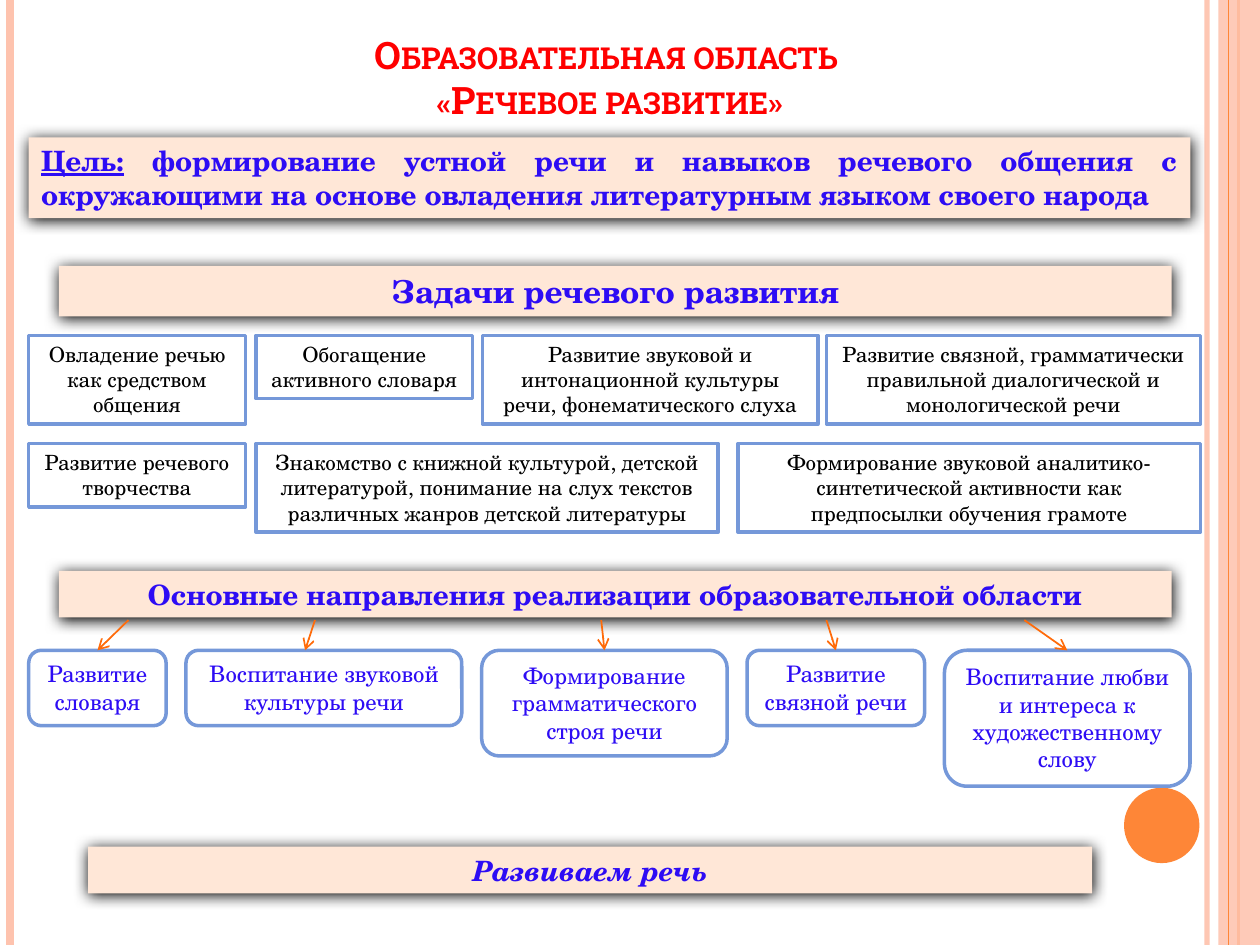
from lxml.etree import SubElement
from pptx import Presentation
from pptx.dml.color import RGBColor
from pptx.enum.shapes import MSO_CONNECTOR, MSO_SHAPE as Shape
from pptx.enum.text import MSO_ANCHOR as Anchor, MSO_AUTO_SIZE as AutoSize, PP_ALIGN as Align
from pptx.oxml.ns import qn
from pptx.util import Cm, Pt

COLORS = {
    "white": "FFFFFF", "black": "000000", "red": "FF0000", "ink": "2D0CF4",
    "band": "FFE7D7", "border": "7598D9", "arrow": "FF6B0A",
    "peach": "FEC3AE", "orange": "FE8637",
}
TITLE_FONT, BODY_FONT = "Roboto Slab", "TeX Gyre Schola"
WIDTH, HEIGHT = 25.4, 19.05

TITLE = "Образовательная область \v«Речевое развитие»"
GOAL = ("Цель:", " формирование устной речи и навыков речевого общения с окружающими "
        "на основе овладения литературным языком своего народа")
BANDS = [
    ("Задачи речевого развития", (1.19, 5.36, 22.43, 1.02), 18, False),
    ("Развиваем речь", (1.78, 17.07, 20.24, 0.94), 16, True),
    ("Основные направления реализации образовательной области", (1.19, 11.51, 22.43, 0.94), 16, False),
]
TASK_ROWS = [
    (6.76, [
        (0.58, 4.37, 3, "Овладение речью как средством общения"),
        (5.16, 4.37, 2, "Обогащение активного словаря"),
        (9.73, 6.76, 3, "Развитие звуковой и интонационной культуры речи, фонематического слуха"),
        (16.66, 7.54, 3, "Развитие связной, грамматически правильной диалогической и монологической речи"),
    ]),
    (8.94, [
        (0.58, 4.37, 2, "Развитие речевого творчества"),
        (5.16, 9.32, 3, "Знакомство с книжной культурой, детской литературой, понимание на слух "
                        "текстов различных жанров детской литературы"),
        (14.88, 9.32, 3, "Формирование звуковой аналитико-синтетической активности как "
                         "предпосылки обучения грамоте"),
    ]),
]
DIRECTIONS = [
    (2.77, 2, "Развитие словаря", 2.59, None),
    (5.56, 2, "Воспитание звуковой культуры речи", 6.35, 6.15),
    (4.95, 3, "Формирование грамматического строя речи", 12.12, None),
    (3.58, 2, "Развитие связной речи", 16.66, None),
    (4.95, 4, "Воспитание любви и интереса к художественному слову", 20.65, None),
]
DIRECTION_LEFT, DIRECTION_TOP, DIRECTION_GAP, ARROW_TOP = 0.58, 13.11, 0.4, 12.5
RULES = [
    (24.33, "peach", 3, 93),
    (0.2, "peach", 4.5, 100),
    (24.97, "orange", 1.5, 100),
]
EDGE_RULE = (24.77, "orange", 0.75, 100)


def color(name):
    return RGBColor.from_string(COLORS[name])


def set_opacity(properties, percent):
    if percent < 100:
        fill_color = next(properties.iter(qn("a:srgbClr")))
        SubElement(fill_color, qn("a:alpha"), val=str(percent * 1000))


def add_line(start, end, color_name, points):
    line = page.shapes.add_connector(MSO_CONNECTOR.STRAIGHT, *map(Cm, start + end))
    line.line.color.rgb = color(color_name)
    line.line.width = Pt(points)
    SubElement(line._element.spPr, qn("a:effectLst"))
    return line


def add_rule(left, color_name, points, opacity):
    rule = add_line((left, 0), (left, HEIGHT), color_name, points)
    set_opacity(rule._element.spPr, opacity)


def add_shape(kind, place, fill, border=None):
    shape = page.shapes.add_shape(kind, *map(Cm, place))
    shape.shadow.inherit = False
    shape.fill.solid()
    shape.fill.fore_color.rgb = color(fill)
    if border:
        shape.line.color.rgb = color(border)
        shape.line.width = Pt(2)
    else:
        shape.line.fill.background()
    return shape


def write(box, texts, size, ink, align=Align.CENTER, anchor=Anchor.TOP,
          font=BODY_FONT, bold=False, italic=False):
    frame = box.text_frame
    frame.word_wrap = True
    frame.vertical_anchor = anchor
    para = frame.paragraphs[0]
    para.alignment = align
    for text in texts:
        para.add_run().text = text
    para.font.name, para.font.size = font, Pt(size)
    para.font.bold, para.font.italic = bold, italic
    para.font.color.rgb = color(ink)
    return para


def add_band(texts, place, size, **style):
    band = add_shape(Shape.RECTANGLE, place, "band")
    effects = band._element.spPr.find(qn("a:effectLst"))
    shadow = SubElement(effects, qn("a:outerShdw"), blurRad=str(Pt(8.5)), dist=str(Pt(1)),
                        dir="5400000", algn="ctr", rotWithShape="0")
    SubElement(shadow, qn("a:srgbClr"), val=COLORS["black"])
    band.text_frame.auto_size = AutoSize.SHAPE_TO_FIT_TEXT
    return write(band, texts, size, "ink", bold=True, **style)


def add_card(kind, place, text, size, ink):
    card = add_shape(kind, place, "white", "border")
    card.text_frame.auto_size = AutoSize.SHAPE_TO_FIT_TEXT
    write(card, [text], size, ink)
    return card


deck = Presentation()
deck.slide_width, deck.slide_height = Cm(WIDTH), Cm(HEIGHT)
page = deck.slides.add_slide(deck.slide_layouts[6])

for rule in RULES:
    add_rule(*rule)
stripe = add_shape(Shape.RECTANGLE, (24.56, 0, 0.84, HEIGHT), "peach")
set_opacity(stripe._element.spPr, 87)
add_rule(*EDGE_RULE)
add_shape(Shape.OVAL, (22.66, 15.88, 1.52, 1.52), "orange")

title = page.shapes.add_textbox(*map(Cm, (1.78, 0.58, 21.03, 2.01)))
heading = write(title, [], 21.6, "red", anchor=Anchor.BOTTOM, font=TITLE_FONT, bold=True)
first, second = TITLE.split("\v")
heading.add_run().text = first
heading.add_line_break()
heading.add_run().text = second
for span in heading.runs:
    span._r.get_or_add_rPr().set("cap", "small")

goal = add_band(GOAL, (0.58, 2.77, 23.42, 1.63), 16, align=Align.JUSTIFY)
goal.runs[0].font.underline = True

for text, place, size, italic in BANDS:
    add_band([text], place, size, italic=italic, anchor=Anchor.MIDDLE)

for top, tasks in TASK_ROWS:
    for left, width, lines, text in tasks:
        add_card(Shape.RECTANGLE, (left, top, width, 0.26 + 0.51 * lines), text, 12, "black")

left = DIRECTION_LEFT
for width, lines, text, arrow_start, arrow_end in DIRECTIONS:
    place = (left, DIRECTION_TOP, width, 0.3 + 0.61 * lines)
    card = add_card(Shape.ROUNDED_RECTANGLE, place, text, 13, "ink")
    tip = arrow_end or left + width / 2
    arrow = add_line((arrow_start, ARROW_TOP), (tip, DIRECTION_TOP), "arrow", 1)
    SubElement(arrow.line._get_or_add_ln(), qn("a:tailEnd"), type="arrow")
    if arrow_end is None:
        arrow.end_connect(card, 0)
    left += width + DIRECTION_GAP

deck.save("out.pptx")
